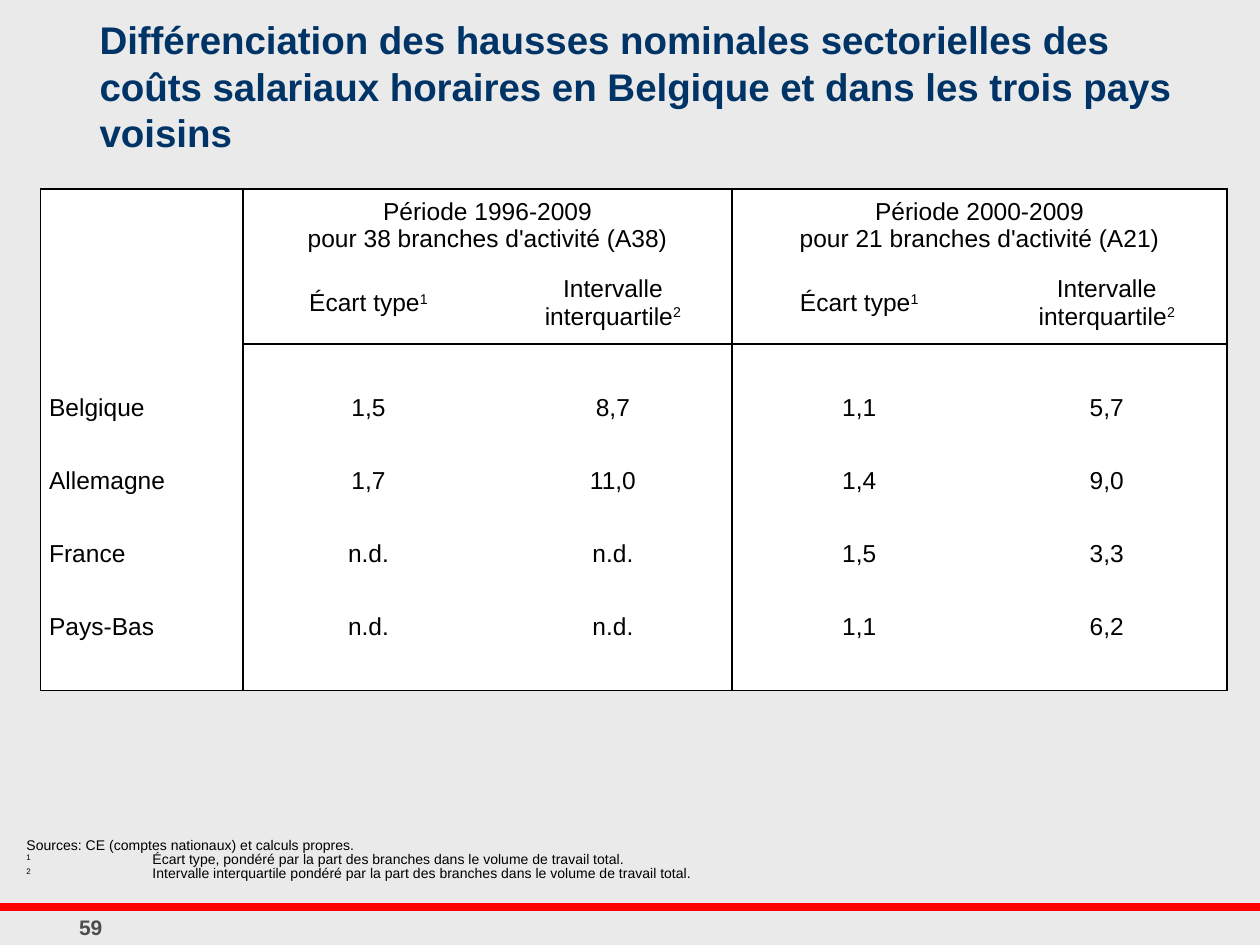
"""Build the slide on sectoral differences in hourly wage cost increases."""
from lxml.etree import SubElement
from pptx import Presentation
from pptx.dml.color import RGBColor
from pptx.enum.shapes import MSO_CONNECTOR
from pptx.enum.text import MSO_ANCHOR as ANCHOR, MSO_AUTO_SIZE, PP_ALIGN as ALIGN
from pptx.oxml.ns import qn
from pptx.util import Inches, Pt

TITLE = ("Différenciation des hausses nominales sectorielles des coûts salariaux "
         "horaires en Belgique et dans les trois pays voisins")
PERIODS = ["Période 1996-2009\npour 38 branches d'activité (A38)",
           "Période 2000-2009\npour 21 branches d'activité (A21)"]
MEASURES = ["Écart type^1", "Intervalle interquartile^2"]
ROWS = [
    ["", PERIODS[0], "", PERIODS[1], ""],
    ["", *MEASURES, *MEASURES],
    [""] * 5,
    ["Belgique", "1,5", "8,7", "1,1", "5,7"],
    ["Allemagne", "1,7", "11,0", "1,4", "9,0"],
    ["France", "n.d.", "n.d.", "1,5", "3,3"],
    ["Pays-Bas", "n.d.", "n.d.", "1,1", "6,2"],
    [""] * 5,
]
NOTES = ("Sources: CE (comptes nationaux) et calculs propres.\n"
         "^1\tÉcart type, pondéré par la part des branches dans le volume de travail total.\n"
         "^2\tIntervalle interquartile pondéré par la part des branches dans le volume de travail total.")
WIDTHS = [1.61, 1.99, 1.89, 2.02, 1.91]
HEIGHTS = [0.58, 0.65, 0.22, 0.58, 0.58, 0.58, 0.58, 0.21]


def color(value):
    return RGBColor.from_string(value)


def write(frame, text, size=14, tint="000000", bold=False, align=ALIGN.LEFT,
          spacing=None, tab=None):
    """Fill a text frame; ^ makes the next character superscript."""
    for index, line in enumerate(text.split("\n")):
        para = frame.paragraphs[0] if index == 0 else frame.add_paragraph()
        para.alignment = align
        if spacing:
            para.line_spacing = spacing
        if tab:
            stops = SubElement(para._p.get_or_add_pPr(), qn("a:tabLst"))
            SubElement(stops, qn("a:tab"), pos=str(Inches(tab)), algn="l")
        if not line:
            SubElement(para._p, qn("a:endParaRPr"), sz=str(size * 100))
        plain, *raised = line.split("^")
        pieces = [(plain, False)]
        for part in raised:
            pieces += [(part[0], True), (part[1:], False)]
        for piece, is_raised in pieces:
            if not piece:
                continue
            span = para.add_run()
            span.text = piece
            span.font.name = "Arial"
            span.font.size = Pt(size)
            span.font.bold = bold
            span.font.color.rgb = color(tint)
            if is_raised:
                span._r.get_or_add_rPr().set("baseline", "30000")


def set_borders(cell, sides=""):
    """Draw the named sides (L, R, T, B) in black and clear the others."""
    props = cell._tc.get_or_add_tcPr()
    for side in "LRTB":
        line = SubElement(props, qn(f"a:ln{side}"), w=str(Pt(1)))
        if side in sides:
            fill = SubElement(line, qn("a:solidFill"))
            SubElement(fill, qn("a:srgbClr"), val="000000")
        else:
            SubElement(line, qn("a:noFill"))


def set_margins(cell, left, top, right, bottom):
    cell.margin_left, cell.margin_top = Inches(left), Inches(top)
    cell.margin_right, cell.margin_bottom = Inches(right), Inches(bottom)


def add_grid(page, left, top, widths, heights):
    table = page.shapes.add_table(len(heights), len(widths), Inches(left), Inches(top),
                                  Inches(sum(widths)), Inches(sum(heights))).table
    table.first_row = table.horz_banding = False
    for column, width in zip(table.columns, widths):
        column.width = Inches(width)
    for row, height in zip(table.rows, heights):
        row.height = Inches(height)
    return table


def border_sides(row, column):
    """Return the ruled sides of a cell in the wage table."""
    rules = {
        "L": column in (0, 1, 3),
        "R": column in (0, 2, 4) or row == 0,
        "T": row == 0 or (row == 2 and column > 0),
        "B": row == len(ROWS) - 1 or (row == 1 and column > 0),
    }
    return "".join(side for side, ruled in rules.items() if ruled)


def add_wage_table(page):
    table = add_grid(page, 0.32, 1.5, WIDTHS, HEIGHTS)
    for row, texts in enumerate(ROWS):
        for column, text in enumerate(texts):
            cell = table.cell(row, column)
            set_borders(cell, border_sides(row, column))
            cell.fill.solid()
            cell.fill.fore_color.rgb = color("FFFFFF")
            set_margins(cell, 0.07, 0, 0.07, 0)
            cell.vertical_anchor = ANCHOR.MIDDLE
            write(cell.text_frame, text, size=14 if text else 8,
                  align=ALIGN.CENTER if column else ALIGN.LEFT)
    for column in (1, 3):
        table.cell(0, column).merge(table.cell(0, column + 1))


def add_notes(page):
    cell = add_grid(page, 0.19, 6.65, [8.16], [0.38]).cell(0, 0)
    set_borders(cell)
    cell.fill.background()
    set_margins(cell, 0.02, 0.01, 0, 0.01)
    write(cell.text_frame, NOTES, size=8, spacing=0.9, tab=1)


def add_title(page):
    title = page.shapes.title
    title.left, title.top = Inches(0.69), Inches(0.08)
    title.width, title.height = Inches(8.84), Inches(0.41)
    frame = title.text_frame
    frame.auto_size = MSO_AUTO_SIZE.NONE
    frame.word_wrap = True
    frame.vertical_anchor = ANCHOR.TOP
    write(frame, TITLE, size=22, tint="003366", bold=True)


def add_footer(page):
    rule = page.shapes.add_connector(MSO_CONNECTOR.STRAIGHT, 0, Inches(7.2),
                                     Inches(10), Inches(7.2))
    rule.line.color.rgb = color("FF0000")
    rule.line.width = Pt(4.5)
    SubElement(rule._element.spPr, qn("a:effectLst"))
    box = page.shapes.add_textbox(Inches(0.28), Inches(7.21), Inches(0.88), Inches(0.29))
    box.text_frame.word_wrap = True
    write(box.text_frame, "59", size=12, tint="4D4D4D", bold=True, align=ALIGN.CENTER)


def main():
    deck = Presentation()
    deck.slide_width, deck.slide_height = Inches(10), Inches(7.5)
    page = deck.slides.add_slide(deck.slide_layouts[5])
    page.background.fill.solid()
    page.background.fill.fore_color.rgb = color("EAEAEA")
    add_footer(page)
    add_title(page)
    add_notes(page)
    add_wage_table(page)
    deck.save("out.pptx")


if __name__ == "__main__":
    main()
